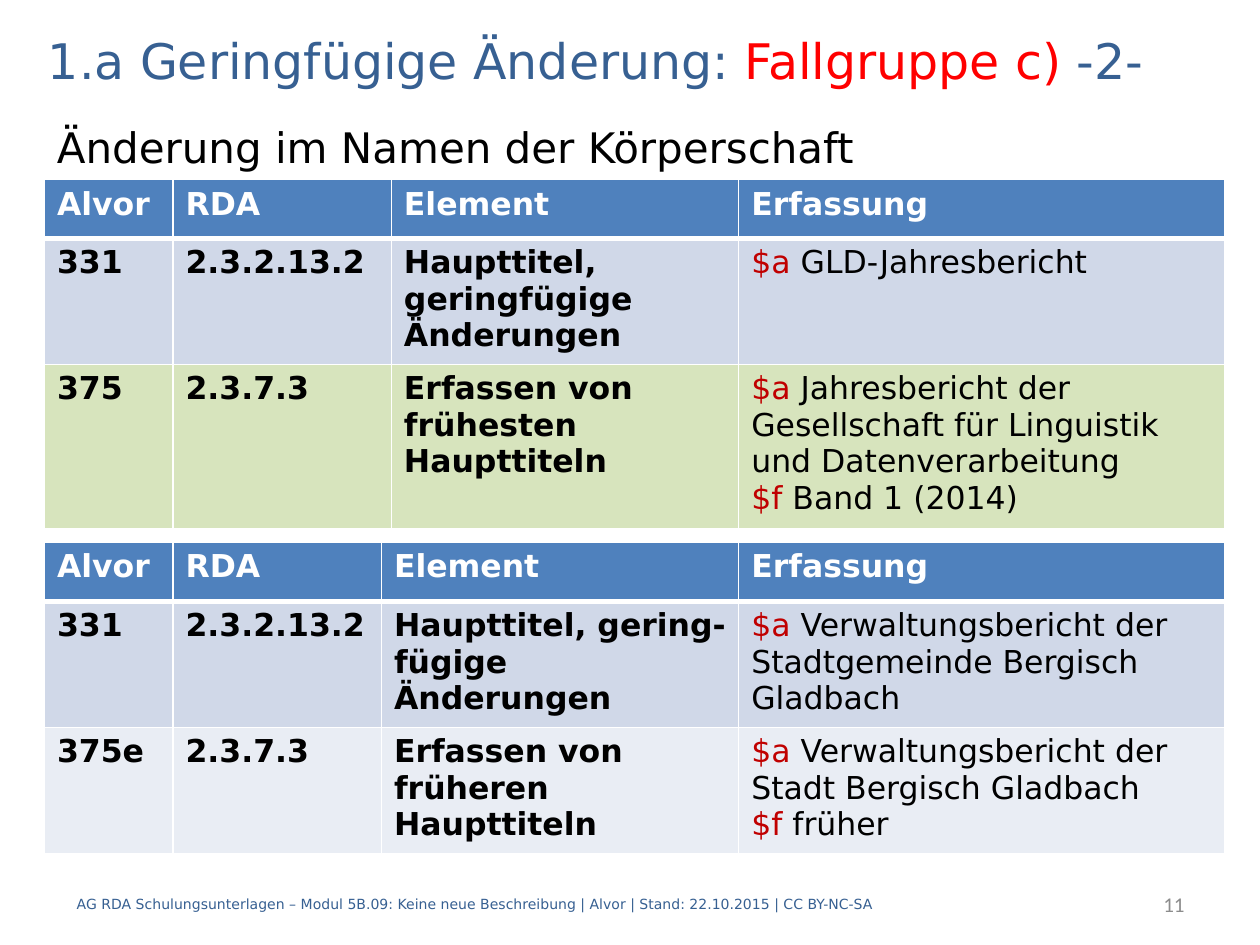
import pptx
import pptx.util
import pptx.dml.color
import pptx.enum.text
import pptx.oxml
import pptx.oxml.ns

Pt = pptx.util.Pt
Align = pptx.enum.text.PP_ALIGN
Anchor = pptx.enum.text.MSO_ANCHOR
BLUE, RED, DARK, BLACK, WHITE = "376092", "FF0000", "C00000", "000000", "FFFFFF"


def rgb(hex):
    return pptx.dml.color.RGBColor.from_string(hex)


def write(frame, text, size=18, color=BLACK, bold=False, font="DejaVu Sans",
          align=Align.LEFT, anchor=Anchor.TOP):
    """Text is a string, or a list of lines made of (text, colour) runs."""
    lines = [[(text, color)]] if isinstance(text, str) else text
    frame.word_wrap = True
    frame.vertical_anchor = anchor
    for i, line in enumerate(lines):
        para = frame.paragraphs[0] if i == 0 else frame.add_paragraph()
        para.alignment = align
        for part, tint in line:
            run = para.add_run()
            run.text = part
            run.font.size, run.font.bold, run.font.name = Pt(size), bold, font
            run.font.color.rgb = rgb(tint)


deck = pptx.Presentation()
deck.slide_width, deck.slide_height = Pt(720), Pt(540)
slide = deck.slides.add_slide(deck.slide_layouts[5])

# Title
title = slide.shapes.title
title.left, title.top, title.width, title.height = Pt(20.2), Pt(14), Pt(680.4), Pt(40.3)
write(title.text_frame, [[("1.a Geringfügige Änderung: ", BLUE),
                          ("Fallgruppe c) ", RED), ("-2-", BLUE)]],
      size=28, anchor=Anchor.MIDDLE)

# Subtitle, footer and page number
foot = ("AG RDA Schulungsunterlagen – Modul 5B.09: Keine neue Beschreibung"
        " | Alvor | Stand: 22.10.2015 | CC BY-NC-SA")
notes = [
    ((25.4, 66.2, 612, 36), "Änderung im Namen der Körperschaft", dict(size=24)),
    ((36.7, 502, 538.6, 28.8), foot, dict(size=8, color=BLUE, anchor=Anchor.MIDDLE)),
    ((569.5, 502, 114.5, 28.8), "11",
     dict(size=12, color="8C8C8C", font="Calibri", align=Align.RIGHT, anchor=Anchor.MIDDLE)),
]
for place, text, style in notes:
    box = slide.shapes.add_textbox(*map(Pt, place))
    write(box.text_frame, text, **style)

# Tables: top, column widths, row heights, last row's fill, body rows
head = ["Alvor", "RDA", "Element", "Erfassung"]
tables = [
    (102.6, [73.5, 124.8, 198.5, 277.9], [33.6, 72, 93.6], "D7E4BD", [
        ["331", "2.3.2.13.2", "Haupttitel, geringfügige Änderungen",
         [[("$a ", DARK), ("GLD-Jahresbericht", BLACK)]]],
        ["375", "2.3.7.3", "Erfassen von frühesten Haupttiteln",
         [[("$a ", DARK), ("Jahresbericht der Gesellschaft für Linguistik"
                           " und Datenverarbeitung", BLACK)],
          [("$f ", DARK), ("Band 1 (2014)", BLACK)]]],
    ]),
    (310, [73.5, 119.1, 204.2, 277.9], [33.6, 72, 72], "E9EDF4", [
        ["331", "2.3.2.13.2", "Haupttitel, gering-fügige Änderungen",
         [[("$a ", DARK),
           ("Verwaltungsbericht der Stadtgemeinde Bergisch Gladbach", BLACK)]]],
        ["375e", "2.3.7.3", "Erfassen von früheren Haupttiteln",
         [[("$a ", DARK),
           ("Verwaltungsbericht der Stadt Bergisch Gladbach", BLACK)],
          [("$f ", DARK), ("früher", BLACK)]]],
    ]),
]
for top, widths, heights, last, body in tables:
    frame = slide.shapes.add_table(3, 4, Pt(25.4), Pt(top),
                                   Pt(sum(widths)), Pt(sum(heights)))
    grid = frame.table
    for col, width in zip(grid.columns, widths):
        col.width = Pt(width)
    for row, height in zip(grid.rows, heights):
        row.height = Pt(height)
    fills = ["4F81BD", "D0D8E8", last]
    for r, (line, fill) in enumerate(zip([head] + body, fills)):
        for c, text in enumerate(line):
            cell = grid.cell(r, c)
            write(cell.text_frame, text, color=BLACK if r else WHITE,
                  bold=r == 0 or c < 3)
            # White borders, thicker between header and body
            for side in "LRTB":
                thick = (r, side) in [(0, "B"), (1, "T")]
                cell._tc.get_or_add_tcPr().append(pptx.oxml.parse_xml(
                    f'<a:ln{side} {pptx.oxml.ns.nsdecls("a")} w="{Pt(3 if thick else 1)}">'
                    f'<a:solidFill><a:srgbClr val="{WHITE}"/></a:solidFill></a:ln{side}>'))
            cell.fill.solid()
            cell.fill.fore_color.rgb = rgb(fill)

deck.save("out.pptx")
